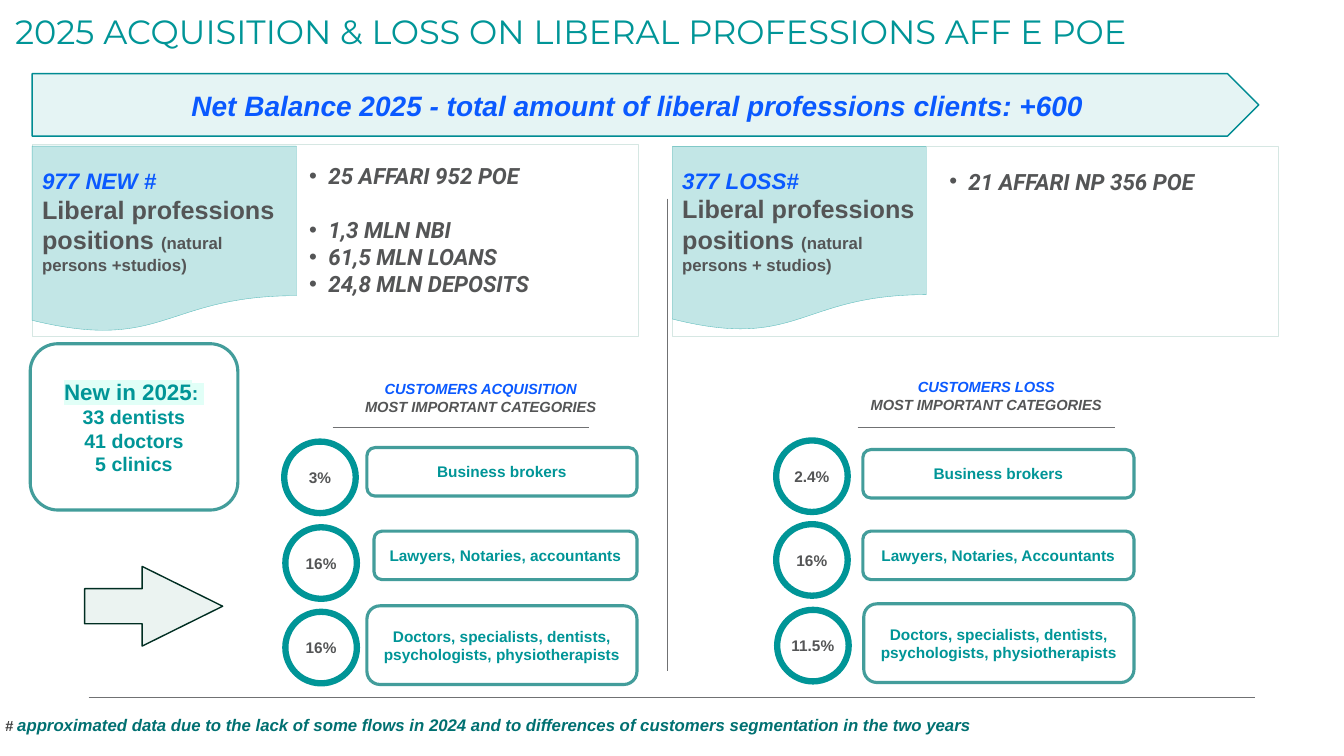
from lxml import etree
from pptx import Presentation
from pptx.dml.color import RGBColor
from pptx.enum.shapes import MSO_CONNECTOR, MSO_SHAPE
from pptx.enum.text import MSO_ANCHOR, MSO_AUTO_SIZE, PP_ALIGN
from pptx.oxml.ns import qn
from pptx.util import Pt

RECTANGLE, DOCUMENT = MSO_SHAPE.RECTANGLE, MSO_SHAPE.FLOWCHART_DOCUMENT
ROUNDED, OVAL = MSO_SHAPE.FLOWCHART_ALTERNATE_PROCESS, MSO_SHAPE.OVAL
BANNER, ARROW = MSO_SHAPE.PENTAGON, MSO_SHAPE.RIGHT_ARROW
STRAIGHT = MSO_CONNECTOR.STRAIGHT
TOP, MIDDLE = MSO_ANCHOR.TOP, MSO_ANCHOR.MIDDLE
LEFT, CENTER = PP_ALIGN.LEFT, PP_ALIGN.CENTER
NO_AUTOSIZE = MSO_AUTO_SIZE.NONE

WHITE = RGBColor(0xFF, 0xFF, 0xFF)
TEAL = RGBColor(0x00, 0x95, 0x97)
DARK_TEAL = RGBColor(0x00, 0x70, 0x71)
BANNER_EDGE = RGBColor(0x00, 0x8B, 0x92)
BOX_EDGE = RGBColor(0x43, 0x9D, 0x9B)
PALE_TEAL = RGBColor(0xC2, 0xE6, 0xE6)
PALE_EDGE = RGBColor(0x58, 0xBA, 0xBA)
PANEL_EDGE = RGBColor(0xD6, 0xE7, 0xE3)
ARROW_FILL = RGBColor(0xEB, 0xF3, 0xF1)
ARROW_EDGE = RGBColor(0x00, 0x2E, 0x22)
BLUE = RGBColor(0x0A, 0x59, 0xFF)
GRAY = RGBColor(0x54, 0x55, 0x56)
RULE_GRAY = RGBColor(0x70, 0x71, 0x73)
HASH_GRAY = RGBColor(0x40, 0x40, 0x40)
HIGHLIGHT = "E1FFF7"

TITLE = "2025 ACQUISITION & LOSS ON LIBERAL PROFESSIONS AFF E POE"
BALANCE = "Net Balance 2025 - total amount of liberal professions clients: +600"
NEW_CLIENTS = ["33 dentists", "41 doctors", "5 clinics"]
FOOTNOTE = ("approximated data due to the lack of some flows in 2024 and to "
            "differences of customers segmentation in the two years")
POSITIONS = "Liberal professions positions "
SUBHEADING = "MOST IMPORTANT CATEGORIES"
SPECIALISTS = "Doctors, specialists, dentists, psychologists, physiotherapists"

# Rectangles are left, top, width, height; bullets pair text with space before.
# Categories hold share, circle corner, label, then label left, top and height.
SIDES = [
    {
        "panel": (23, 103, 432.7, 137.5), "panel_inset": 13,
        "bullets": [("25 AFFARI 952 POE", 0), ("1,3 MLN NBI", 19.5),
                    ("61,5 MLN LOANS", 0), ("24,8 MLN DEPOSITS", 0)],
        "card": (23, 104.4, 188.8, 133.2),
        "count": "977 NEW #", "detail": "(natural persons +studios)",
        "heading": "CUSTOMERS ACQUISITION", "heading_at": (259.2, 271.4, 168.5, 28.8),
        "rule": (237.6, 420.5), "label_right": 455,
        "categories": [
            ("3%", (203, 315.4), "Business brokers", (262.1, 319.7, 34.6)),
            ("16%", (203.8, 376.6), "Lawyers, Notaries, accountants", (267.1, 379.4, 34.6)),
            ("16%", (203.8, 437), SPECIALISTS, (262.1, 432.7, 56.2)),
        ],
    },
    {
        "panel": (480.2, 104.8, 432.7, 135.4), "panel_inset": 15,
        "bullets": [("21 AFFARI NP 356 POE", 0)],
        "card": (480.2, 104.8, 181.4, 131.8),
        "count": "377 LOSS#", "detail": "(natural persons + studios)",
        "heading": "CUSTOMERS LOSS", "heading_at": (618.5, 270, 172.1, 28.8),
        "rule": (612.7, 796.3), "label_right": 810,
        "categories": [
            ("2.4%", (554.4, 314.6), "Business brokers", (616.3, 321.1, 34.6)),
            ("16%", (554.4, 374.4), "Lawyers, Notaries, Accountants", (616.3, 379.4, 34.6)),
            ("11.5%", (555.1, 435.6), SPECIALISTS, (617, 431.3, 56.2)),
        ],
    },
]
CIRCLE = 51.1

deck = Presentation()
deck.slide_width, deck.slide_height = Pt(960), Pt(540)
page = deck.slides.add_slide(deck.slide_layouts[5])


def add_box(kind, rect, fill, edge, weight):
    box = page.shapes.add_shape(kind, *map(Pt, rect))
    box.shadow.inherit = False
    box.fill.solid()
    box.fill.fore_color.rgb = fill
    box.line.color.rgb = edge
    box.line.width = Pt(weight)
    return box


def add_text_box(rect):
    return page.shapes.add_textbox(*map(Pt, rect))


def add_rule(x1, y1, x2, y2):
    rule = page.shapes.add_connector(STRAIGHT, *map(Pt, (x1, y1, x2, y2)))
    rule.line.color.rgb = RULE_GRAY
    rule.line.width = Pt(0.5)
    etree.SubElement(rule._element.spPr, qn("a:effectLst"))


def set_frame(box, anchor=MIDDLE, insets=(7.2, 3.6, 7.2, 3.6)):
    frame = box.text_frame
    frame.word_wrap = True
    frame.auto_size = NO_AUTOSIZE
    frame.vertical_anchor = anchor
    (frame.margin_left, frame.margin_top,
     frame.margin_right, frame.margin_bottom) = map(Pt, insets)


def write(box, text, size=11, color=TEAL, font="Arial", bold=True, italic=False,
          align=CENTER, joined=False, before=0, bullet=False, highlight=None):
    """Add a paragraph to the box, or a span to its last one when joined."""
    frame = box.text_frame
    para = frame.paragraphs[-1]
    if not joined:
        if para.runs:
            para = frame.add_paragraph()
        para.alignment = align
        para.space_before = Pt(before)
        if bullet:
            props = para._p.get_or_add_pPr()
            props.set("marL", str(Pt(204.5)))
            props.set("indent", str(Pt(-13.7)))
            etree.SubElement(props, qn("a:buFont"), typeface="Arial")
            etree.SubElement(props, qn("a:buChar"), char="•")
    span = para.add_run()
    span.text = text
    span.font.size, span.font.name = Pt(size), font
    span.font.bold, span.font.italic = bold, italic
    span.font.color.rgb = color
    if highlight:
        mark = etree.Element(qn("a:highlight"))
        etree.SubElement(mark, qn("a:srgbClr"), val=highlight)
        span.font._element.find(qn("a:solidFill")).addnext(mark)


def add_side(side):
    panel = add_box(RECTANGLE, side["panel"], WHITE, PANEL_EDGE, 0.5)
    set_frame(panel, TOP, (7.2, side["panel_inset"], 7.2, 3.6))
    for text, before in side["bullets"]:
        write(panel, text, size=16, color=GRAY, font="Roboto", italic=True,
              align=LEFT, before=before, bullet=True)

    card = add_box(DOCUMENT, side["card"], PALE_TEAL, PALE_EDGE, 0.25)
    set_frame(card)
    write(card, side["count"], size=16, color=BLUE, italic=True, align=LEFT)
    write(card, POSITIONS, size=18, color=GRAY, align=LEFT)
    write(card, side["detail"], size=12, color=GRAY, joined=True)

    heading = add_text_box(side["heading_at"])
    set_frame(heading, TOP, (0, 0, 0, 3.6))
    write(heading, side["heading"], size=10.5, color=BLUE, italic=True)
    write(heading, SUBHEADING, size=10.5, color=GRAY, italic=True)
    start, end = side["rule"]
    add_rule(start, 305.3, end, 305.3)

    for share, corner, name, (left, top, height) in side["categories"]:
        circle = add_box(OVAL, (*corner, CIRCLE, CIRCLE), WHITE, TEAL, 4.5)
        set_frame(circle, insets=(0, 0, 0, 0))
        write(circle, share, color=GRAY)
        width = side["label_right"] - left
        label = add_box(ROUNDED, (left, top, width, height), WHITE, BOX_EDGE, 2.25)
        set_frame(label)
        write(label, name)


title = page.shapes.title
title.left, title.top, title.width, title.height = map(Pt, (3.6, 4.3, 949, 36))
set_frame(title, TOP)
write(title, TITLE, size=24, font="Montserrat", bold=False, align=LEFT)

banner = add_box(BANNER, (23, 52.6, 876.2, 44.6), TEAL, BANNER_EDGE, 1)
banner_color = banner._element.spPr.find(qn("a:solidFill"))[0]
etree.SubElement(banner_color, qn("a:alpha"), val="10000")
set_frame(banner, insets=(2.9, 3.6, 2.9, 3.6))
write(banner, BALANCE, size=20, color=BLUE, italic=True)

for side in SIDES:
    add_side(side)
add_rule(476.6, 141.8, 476.6, 479.5)
add_rule(63.4, 498.2, 896.4, 498.2)

news = add_box(ROUNDED, (21.6, 245.5, 148.3, 118.8), WHITE, BOX_EDGE, 2.25)
set_frame(news)
write(news, "New in 2025", size=16, highlight=HIGHLIGHT)
write(news, ": ", size=14, joined=True, highlight=HIGHLIGHT)
for line in NEW_CLIENTS:
    write(news, line, size=14)

arrow = add_box(ARROW, (60.5, 404.6, 98.6, 56.9), ARROW_FILL, ARROW_EDGE, 1)
arrow.adjustments[0], arrow.adjustments[1] = 0.44, 1.01

footnote = add_text_box((3.6, 510.5, 830.2, 14.4))
set_frame(footnote, TOP, (0, 0, 0, 0))
write(footnote, "# ", size=10.5, color=HASH_GRAY, italic=True, align=LEFT)
write(footnote, FOOTNOTE, size=12, color=DARK_TEAL, italic=True, joined=True)

deck.save("out.pptx")
